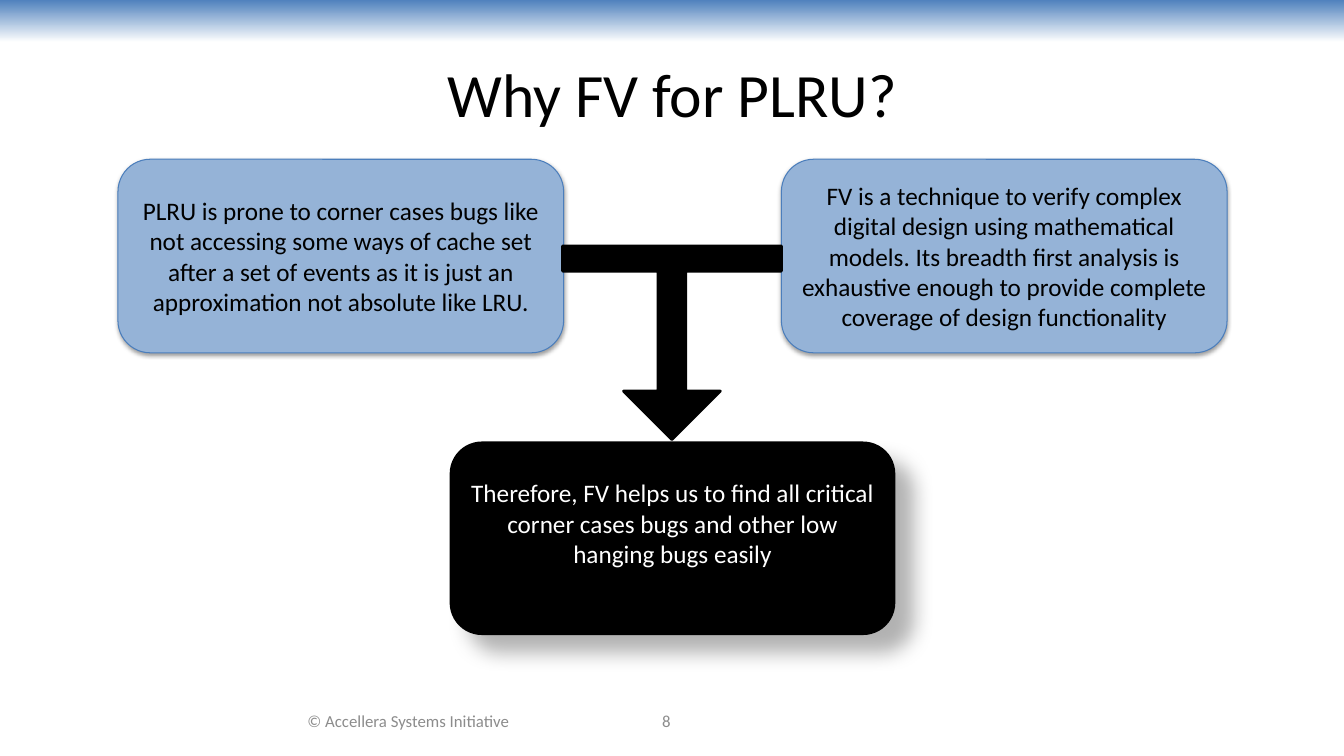
from dataclasses import dataclass

from lxml import etree
from pptx import Presentation
from pptx.dml.color import RGBColor
from pptx.enum.shapes import MSO_SHAPE
from pptx.enum.text import MSO_ANCHOR, PP_ALIGN
from pptx.oxml.ns import qn
from pptx.util import Inches, Pt

RECT = MSO_SHAPE.RECTANGLE
ROUNDED = MSO_SHAPE.ROUNDED_RECTANGLE
CALLOUT = MSO_SHAPE.DOWN_ARROW_CALLOUT
CENTER = PP_ALIGN.CENTER
MIDDLE = MSO_ANCHOR.MIDDLE


@dataclass(frozen=True)
class Theme:
    font: str = "Calibri"
    title_size: int = 44
    body_size: int = 18
    footer_size: int = 12
    black: RGBColor = RGBColor(0x00, 0x00, 0x00)
    white: RGBColor = RGBColor(0xFF, 0xFF, 0xFF)
    banner: RGBColor = RGBColor(0x4F, 0x81, 0xBD)
    reason: RGBColor = RGBColor(0x95, 0xB3, 0xD7)
    reason_edge: RGBColor = RGBColor(0x4B, 0x7E, 0xBC)
    footer: RGBColor = RGBColor(0x8C, 0x8C, 0x8C)


THEME = Theme()


def write(shape, text, size, color):
    frame = shape.text_frame
    frame.word_wrap = True
    frame.vertical_anchor = MIDDLE
    paragraph = frame.paragraphs[0]
    paragraph.alignment = CENTER
    run = paragraph.add_run()
    run.text = text
    run.font.name = THEME.font
    run.font.size = Pt(size)
    run.font.color.rgb = color


def cast_shadow(shape, alpha, blur, distance, angle):
    """Add an outer black shadow: alpha in percent, lengths in points, angle in degrees."""
    shape.shadow.inherit = False
    effects = shape._element.spPr.find(qn("a:effectLst"))
    outer = etree.SubElement(
        effects, qn("a:outerShdw"), blurRad=str(Pt(blur)), dist=str(Pt(distance)),
        dir=str(angle * 60000), algn="tl", rotWithShape="0")
    color = etree.SubElement(outer, qn("a:srgbClr"), val=str(THEME.black))
    etree.SubElement(color, qn("a:alpha"), val=str(alpha * 1000))


prs = Presentation()
prs.slide_width = Inches(13.33)
prs.slide_height = Inches(7.5)
slide = prs.slides.add_slide(prs.slide_layouts[5])
shapes = slide.shapes

# Banner
banner = shapes.add_shape(RECT, 0, 0, prs.slide_width, Inches(0.42))
banner.shadow.inherit = False
banner.line.fill.background()
banner.fill.gradient()
banner.fill.gradient_angle = 270
for stop, color in zip(banner.fill.gradient_stops, (THEME.banner, THEME.white)):
    stop.color.rgb = color

# Title
title = shapes.title
title.left, title.top = Inches(0.67), Inches(0.3)
title.width, title.height = Inches(12), Inches(1.25)
write(title, "Why FV for PLRU?", THEME.title_size, THEME.black)

# Footer
for text, left, width in (("© Accellera Systems Initiative", 2.44, 3.22), ("8", 5.33, 2.56)):
    footer = shapes.add_textbox(Inches(left), Inches(6.95), Inches(width), Inches(0.4))
    write(footer, text, THEME.footer_size, THEME.footer)

# Two reasons leading to one conclusion
box_width, box_height = Inches(4.42), Inches(1.92)

conclusion = shapes.add_shape(ROUNDED, Inches(4.46), Inches(4.38), box_width, box_height)
conclusion.fill.solid()
conclusion.fill.fore_color.rgb = THEME.black
conclusion.line.fill.background()
cast_shadow(conclusion, 30, 15, 18, 45)
write(conclusion,
      "Therefore, FV helps us to find all critical corner cases bugs and other low "
      "hanging bugs easily",
      THEME.body_size, THEME.white)
conclusion.text_frame.margin_bottom = Inches(0.35)

reasons = (
    (1.17, "PLRU is prone to corner cases bugs like not accessing some ways of cache set "
           "after a set of events as it is just an approximation not absolute like LRU."),
    (7.75, "FV is a technique to verify complex digital design using mathematical models. "
           "Its breadth first analysis is exhaustive enough to provide complete coverage "
           "of design functionality"),
)
for left, text in reasons:
    reason = shapes.add_shape(ROUNDED, Inches(left), Inches(1.58), box_width, box_height)
    reason.fill.solid()
    reason.fill.fore_color.rgb = THEME.reason
    reason.line.color.rgb = THEME.reason_edge
    reason.line.width = Pt(0.75)
    cast_shadow(reason, 38, 3.1, 1.6, 90)
    write(reason, text, THEME.body_size, THEME.black)

arrow = shapes.add_shape(CALLOUT, Inches(5.58), Inches(2.44), Inches(2.17), box_height)
for index, value in enumerate((0.143, 0.25, 0.25, 0.13)):
    arrow.adjustments[index] = value
arrow.shadow.inherit = False
arrow.fill.solid()
arrow.fill.fore_color.rgb = THEME.black
arrow.line.color.rgb = THEME.black
arrow.line.width = Pt(2)

prs.save("out.pptx")
